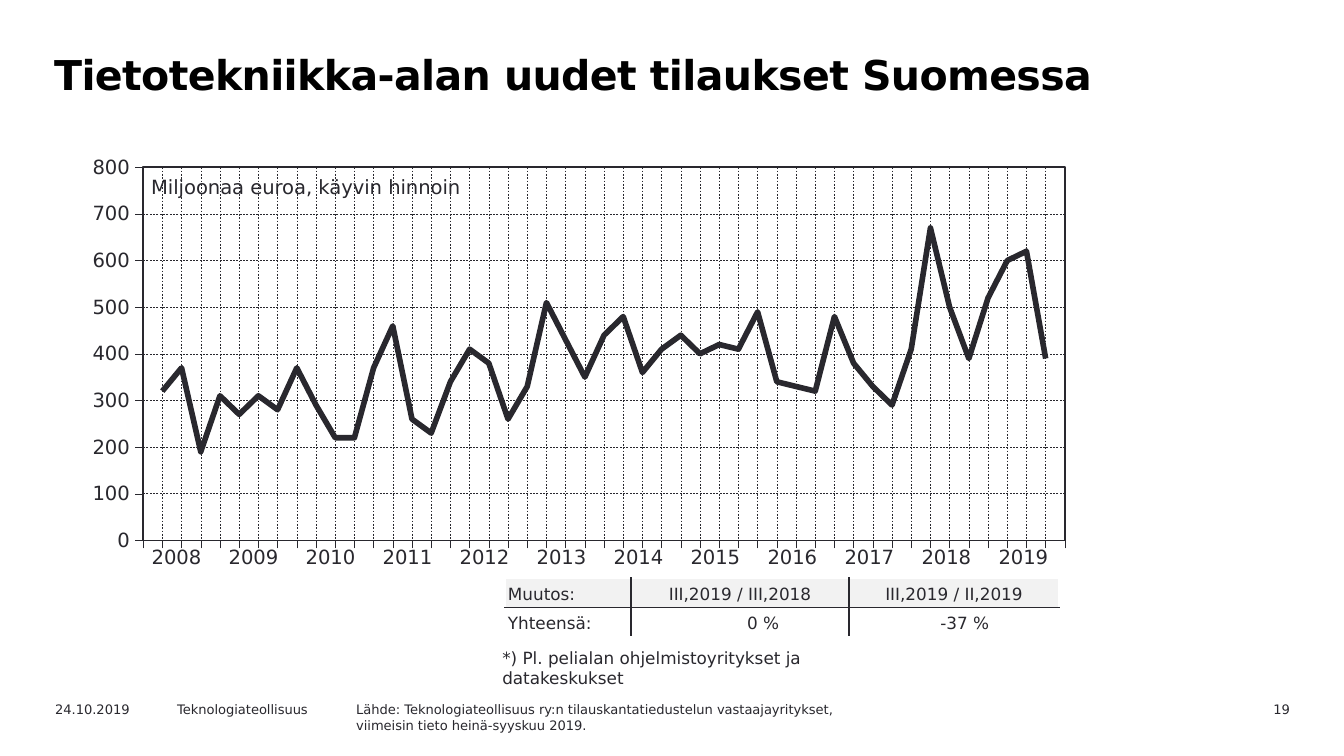
"""Build a slide on new IT orders in Finland: a line chart with year and change tables."""
import lxml.etree
import pptx
import pptx.chart.data
import pptx.dml.color
import pptx.enum.chart
import pptx.enum.dml
import pptx.enum.text
import pptx.oxml
import pptx.oxml.ns
import pptx.util

PX = 914400 / 134.4
RGB = pptx.dml.color.RGBColor.from_string
PT = pptx.util.Pt
QN = pptx.oxml.ns.qn
ALIGN = pptx.enum.text.PP_ALIGN
THEME = {
    "ink": "29282E", "black": "000000", "white": "FFFFFF", "band": "F2F2F2",
    "font": "DejaVu Sans", "title": 22, "axis": 10.5, "body": 9, "foot": 7,
}


def px(*nums):
    return [round(num * PX) for num in nums]


def write(frame, lines, size, form=None, tint="ink", bold=False):
    for num, line in enumerate(lines):
        para = frame.paragraphs[0] if num == 0 else frame.add_paragraph()
        for key, val in (form or {}).items():
            setattr(para, key, val)
        run = para.add_run()
        run.text = line
        for key, val in {"size": PT(THEME[size]), "name": THEME["font"], "bold": bold}.items():
            setattr(run.font, key, val)
        run.font.color.rgb = RGB(THEME[tint])


deck = pptx.Presentation()
deck.slide_width, deck.slide_height = px(1344, 756)
slide = deck.slides.add_slide(deck.slide_layouts[6])

title = slide.shapes.add_textbox(*px(38, 42, 1175, 95)).text_frame
title.word_wrap = True
write(title, ["Tietotekniikka-alan uudet tilaukset Suomessa"], "title",
      {"line_spacing": PT(27)}, "black", True)
head = title.paragraphs[0]
head._p.get_or_add_pPr().set("marL", str(px(3)[0]))
head.runs[0]._r.get_or_add_rPr().set("spc", "-30")

orders = [
    None, 320, 370, 190, 310, 270, 310, 280, 370, 290, 220, 220, 370,
    460, 260, 230, 340, 410, 380, 260, 330, 510, 430, 350, 440,
    480, 360, 410, 440, 400, 420, 410, 490, 340, 330, 320, 480,
    380, 330, 290, 410, 670, 500, 390, 520, 600, 620, 390, None,
]
data = pptx.chart.data.CategoryChartData()
data.categories = [str(num + 1) for num in range(len(orders))]
data.add_series("Series 1", orders)
chart = slide.shapes.add_chart(
    pptx.enum.chart.XL_CHART_TYPE.LINE, *px(42, 149, 1234, 448), data).chart
for key, val in {"has_legend": False, "has_title": False}.items():
    setattr(chart, key, val)
for key, val in {"size": PT(THEME["axis"]), "name": THEME["font"], "bold": False}.items():
    setattr(chart.font, key, val)
chart.font.color.rgb = RGB(THEME["ink"])

plot = chart.plots[0]
plot.vary_by_categories = False
line = plot.series[0]
line.smooth = False
line.marker.style = pptx.enum.chart.XL_MARKER_STYLE.NONE
line.format.line.width = PT(3)
line.format.line.color.rgb = RGB(THEME["ink"])

marks = pptx.enum.chart.XL_TICK_MARK
for axis in (chart.category_axis, chart.value_axis):
    for key, val in {"has_major_gridlines": True, "major_tick_mark": marks.OUTSIDE,
                     "minor_tick_mark": marks.NONE}.items():
        setattr(axis, key, val)
    grid = axis.major_gridlines.format.line
    for rule, width in ((axis.format.line, 0.22), (grid, 0.25)):
        rule.width = PT(width)
        rule.color.rgb = RGB(THEME["ink"])
    grid.dash_style = pptx.enum.dml.MSO_LINE.DASH
chart.category_axis.tick_label_position = pptx.enum.chart.XL_TICK_LABEL_POSITION.NONE
for key, val in {"minimum_scale": 0, "maximum_scale": 800, "major_unit": 100}.items():
    setattr(chart.value_axis, key, val)
labels = chart.value_axis.tick_labels
for key, val in {"number_format": "#,##0", "number_format_is_linked": False}.items():
    setattr(labels, key, val)

area = chart._chartSpace.chart.plotArea
for old in area.findall(QN("c:layout")):
    area.remove(old)
room = lxml.etree.Element(QN("c:layout"))
area.insert(0, room)
spot = lxml.etree.SubElement(room, QN("c:manualLayout"))
for tag, val in {"layoutTarget": "inner", "xMode": "edge", "yMode": "edge",
                 "x": "0.082", "y": "0.041", "w": "0.747", "h": "0.833"}.items():
    lxml.etree.SubElement(spot, QN("c:" + tag)).set("val", val)
cross = lxml.etree.Element(QN("c:crossBetween"), val="midCat")
next(area.iter(QN("c:majorUnit"))).addprevious(cross)
area.append(pptx.oxml.parse_xml(
    f'<c:spPr {pptx.oxml.ns.nsdecls("c", "a")}><a:noFill/><a:ln w="12700"><a:solidFill>'
    f'<a:srgbClr val="{THEME["ink"]}"/></a:solidFill></a:ln></c:spPr>'))

years = slide.shapes.add_table(1, 12, *px(138, 540, 924, 42)).table
change = slide.shapes.add_table(2, 3, *px(505, 578, 554, 59)).table
for table in (years, change):
    for key in ("first_row", "horz_banding"):
        setattr(table, key, False)

for num, cell in enumerate(years.iter_cells()):
    props = cell._tc.get_or_add_tcPr()
    for side in "LRTB":
        edge = lxml.etree.SubElement(props, QN("a:ln" + side))
        lxml.etree.SubElement(edge, QN("a:noFill"))
    cell.fill.background()
    write(cell.text_frame, [str(2008 + num)], "axis", {"alignment": ALIGN.CENTER})

for col, width in zip(change.columns, px(126, 218, 210)):
    col.width = width
rows = [
    ["Muutos:", "III,2019 / III,2018", "III,2019 / II,2019"],
    ["Yhteensä:", "0 %", "-37 %"],
]
for r, row in enumerate(rows):
    for c, words in enumerate(row):
        cell = change.cell(r, c)
        props = cell._tc.get_or_add_tcPr()
        for side, inner in {"L": c > 0, "R": c < 2, "T": r > 0, "B": r < 1}.items():
            edge = lxml.etree.SubElement(props, QN("a:ln" + side), w="12700")
            fill = lxml.etree.SubElement(edge, QN("a:solidFill"))
            tint = THEME["ink" if inner else "white"]
            lxml.etree.SubElement(fill, QN("a:srgbClr"), val=tint)
        cell.fill.solid()
        cell.fill.fore_color.rgb = RGB(THEME["white" if r else "band"])
        cell.vertical_anchor = pptx.enum.text.MSO_ANCHOR.BOTTOM
        gap, wide = px(3, 70)
        for side in ("left", "right", "top", "bottom"):
            setattr(cell, "margin_" + side, wide if r and c and side == "right" else gap)
        align = ALIGN.LEFT if c == 0 else ALIGN.RIGHT if r else ALIGN.CENTER
        write(cell.text_frame, [words], "body", {"alignment": align})

source = ["Lähde: Teknologiateollisuus ry:n tilauskantatiedustelun vastaajayritykset,",
          "viimeisin tieto heinä-syyskuu 2019."]
notes = [
    ((138, 168, 349, 36), ["Miljoonaa euroa, käyvin hinnoin"], "axis", ALIGN.LEFT, False),
    ((489, 641, 402, 54), ["*) Pl. pelialan ohjelmistoyritykset ja datakeskukset"],
     "body", ALIGN.LEFT, True),
    ((1177, 695, 126, 24), ["19"], "foot", ALIGN.RIGHT, True),
    ((42, 695, 134, 24), ["24.10.2019"], "foot", ALIGN.LEFT, True),
    ((164, 695, 191, 24), ["Teknologiateollisuus"], "foot", ALIGN.LEFT, True),
    ((343, 695, 681, 24), source, "foot", ALIGN.LEFT, True),
]
for place, lines, size, align, wrap in notes:
    frame = slide.shapes.add_textbox(*px(*place)).text_frame
    frame.word_wrap = wrap
    write(frame, lines, size, {"alignment": align})

deck.save("out.pptx")
